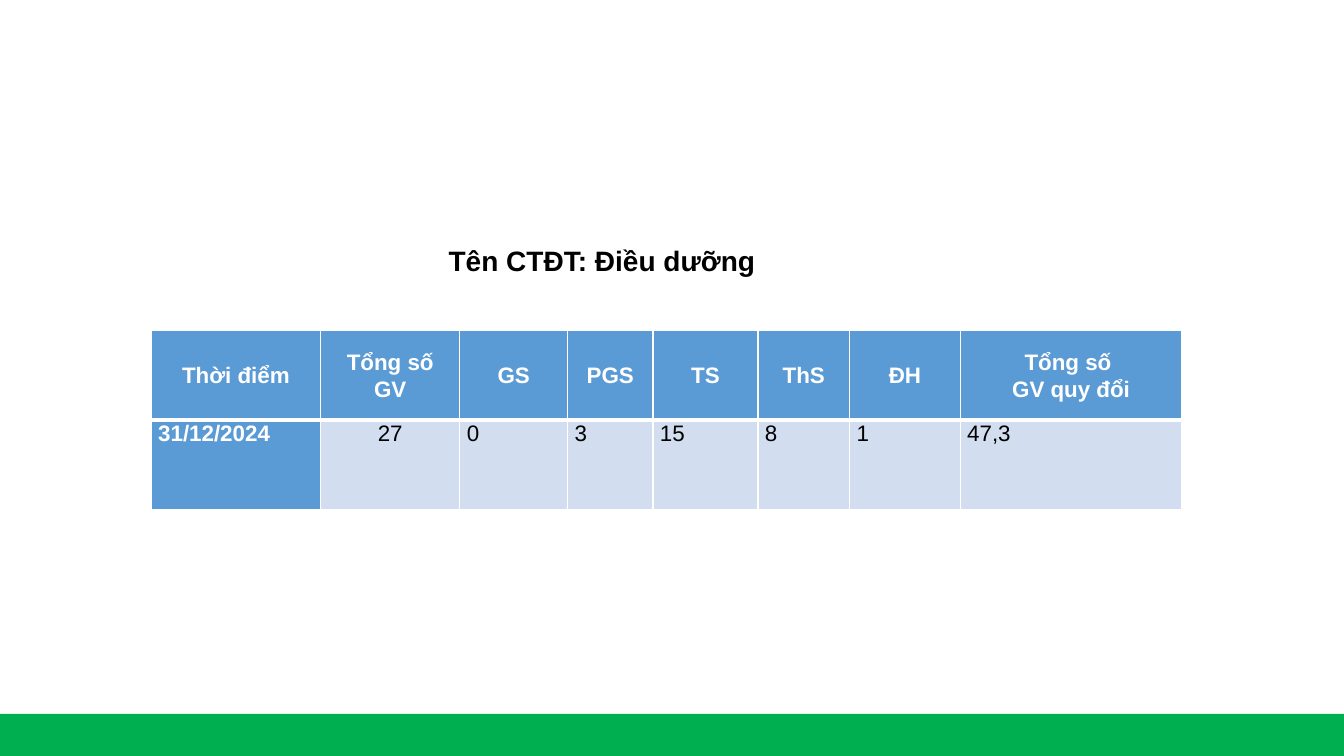
from dataclasses import dataclass

from lxml import etree
from pptx import Presentation
from pptx.dml.color import RGBColor
from pptx.enum.shapes import MSO_SHAPE
from pptx.enum.text import MSO_ANCHOR, MSO_AUTO_SIZE, PP_ALIGN
from pptx.oxml.ns import qn
from pptx.util import Pt

RECTANGLE = MSO_SHAPE.RECTANGLE
TOP, MIDDLE = MSO_ANCHOR.TOP, MSO_ANCHOR.MIDDLE
LEFT, CENTER = PP_ALIGN.LEFT, PP_ALIGN.CENTER
FIXED_SIZE = MSO_AUTO_SIZE.NONE

FONT = "Arial"
WHITE, BLACK = "FFFFFF", "000000"
GREEN, BLUE, PALE_BLUE = "00B050", "5B9BD5", "D2DEEF"
ROW_HEIGHT = 64
THIN, THICK = 1, 3


@dataclass
class Column:
    heading: str
    value: str
    width: float
    value_align: PP_ALIGN = LEFT


COLUMNS = [
    Column("Thời điểm", "31/12/2024", 121),
    Column("Tổng số GV", "27", 99.5, CENTER),
    Column("GS", "0", 77),
    Column("PGS", "3", 61),
    Column("TS", "15", 75),
    Column("ThS", "8", 65.5),
    Column("ĐH", "1", 79),
    Column("Tổng số \nGV quy đổi", "47,3", 158.5),
]


def color(value: str) -> RGBColor:
    return RGBColor.from_string(value)


def write(para, text: str, size: float, ink: str, bold: bool, align: PP_ALIGN) -> None:
    para.alignment = align
    for index, line in enumerate(text.split("\n")):
        if index:
            para.add_line_break()
        span = para.add_run()
        span.text = line
        span.font.name = FONT
        span.font.size = Pt(size)
        span.font.bold = bold
        span.font.color.rgb = color(ink)


def add_borders(cell, top: float, bottom: float) -> None:
    """Draw white cell borders; must run before the cell gets its fill."""
    properties = cell._tc.get_or_add_tcPr()
    for side, width in (("L", THIN), ("R", THIN), ("T", top), ("B", bottom)):
        line = etree.SubElement(properties, qn(f"a:ln{side}"), w=str(Pt(width)))
        fill = etree.SubElement(line, qn("a:solidFill"))
        etree.SubElement(fill, qn("a:srgbClr"), val=WHITE)


def format_cell(cell, text: str, align: PP_ALIGN, is_header: bool, is_label: bool) -> None:
    add_borders(cell, THIN if is_header else THICK, THICK if is_header else THIN)
    cell.fill.solid()
    cell.fill.fore_color.rgb = color(BLUE if is_label else PALE_BLUE)
    cell.margin_left = cell.margin_right = Pt(5)
    cell.margin_top = cell.margin_bottom = Pt(0)
    cell.vertical_anchor = MIDDLE if is_header else TOP
    para = cell.text_frame.paragraphs[0]
    para.line_spacing = 1.07
    write(para, text, 16, WHITE if is_label else BLACK, is_label, align)


def add_footer_bar(page) -> None:
    bar = page.shapes.add_shape(RECTANGLE, Pt(0), Pt(510), Pt(960), Pt(30))
    bar.shadow.inherit = False
    bar.fill.solid()
    bar.fill.fore_color.rgb = color(GREEN)
    bar.line.fill.background()


def add_title(page) -> None:
    title = page.shapes.title
    title.left, title.top, title.width, title.height = Pt(312), Pt(170), Pt(236), Pt(55)
    frame = title.text_frame
    frame.auto_size = FIXED_SIZE
    frame.word_wrap = False
    frame.vertical_anchor = TOP
    write(frame.paragraphs[0], "Tên CTĐT: Điều dưỡng", 20, BLACK, True, CENTER)


def add_staff_table(page) -> None:
    total_width = sum(column.width for column in COLUMNS)
    table = page.shapes.add_table(
        2, len(COLUMNS), Pt(108), Pt(236), Pt(total_width), Pt(2 * ROW_HEIGHT)
    ).table
    for row in table.rows:
        row.height = Pt(ROW_HEIGHT)
    for index, column in enumerate(COLUMNS):
        table.columns[index].width = Pt(column.width)
        format_cell(table.cell(0, index), column.heading, CENTER, True, True)
        format_cell(table.cell(1, index), column.value, column.value_align, False, index == 0)


def main() -> None:
    deck = Presentation()
    deck.slide_width, deck.slide_height = Pt(960), Pt(540)
    page = deck.slides.add_slide(deck.slide_layouts.get_by_name("Title Only"))
    add_footer_bar(page)
    add_staff_table(page)
    add_title(page)
    deck.save("out.pptx")


if __name__ == "__main__":
    main()
